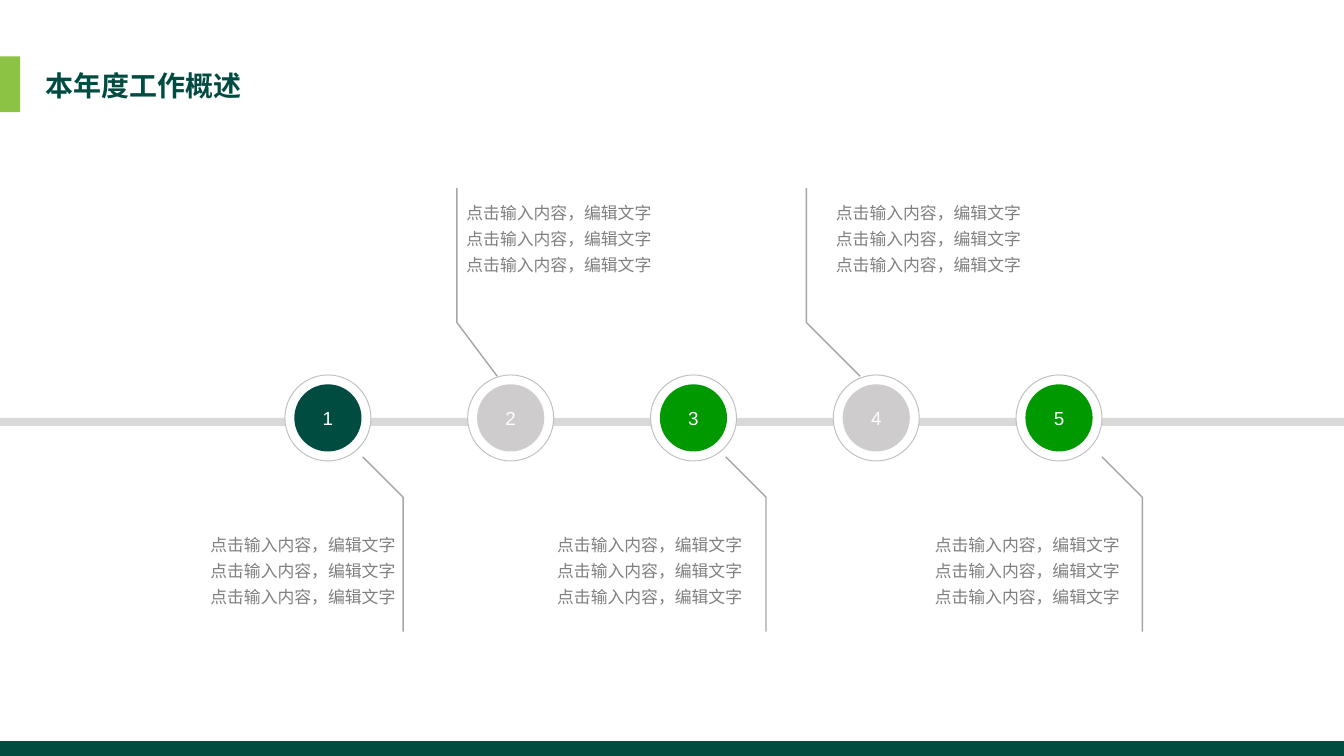
from pptx import Presentation
from pptx import util as u
from pptx.dml.color import RGBColor
from pptx.enum import shapes, text

presentation = Presentation()
presentation.slide_width = u.Inches(10)
presentation.slide_height = u.Inches(5.625)
slide = presentation.slides.add_slide(presentation.slide_layouts[6])

# Square grid: 100 columns across the slide, 56.25 rows down it
CELL = presentation.slide_width // 100
COLUMNS, ROWS = 100, 56.25
DARK, GREEN, GRAY = "004C41", "009900", "CECCCC"
RECTANGLE, OVAL = shapes.MSO_SHAPE.RECTANGLE, shapes.MSO_SHAPE.OVAL


def add_filled(kind, left, top, width, height, fill, line=None):
    """Add a preset shape, placed in grid cells, with an optional thin outline."""
    shape = slide.shapes.add_shape(
        kind, *(round(n * CELL) for n in (left, top, width, height)))
    shape.shadow.inherit = False
    shape.fill.solid()
    shape.fill.fore_color.rgb = RGBColor.from_string(fill)
    if line:
        shape.line.color.rgb = RGBColor.from_string(line)
        shape.line.width = u.Pt(0.5)
    else:
        shape.line.fill.background()
    return shape


def format_text(frame, lines, size, color, align, bold=False, spacing=None):
    frame.word_wrap = True
    frame.text = "\n".join(lines)
    for paragraph in frame.paragraphs:
        paragraph.alignment = align
        if spacing:
            paragraph.line_spacing = spacing
        for run in paragraph.runs:
            run.font.name = "Arial"
            run.font.size = u.Pt(size)
            run.font.bold = bold
            run.font.color.rgb = RGBColor.from_string(color)


# Title and page bars
add_filled(RECTANGLE, 0, 4.2, 1.5, 4.15, "8CC345")
title = slide.shapes.add_textbox(*(round(n * CELL) for n in (2.4, 4.6, 22, 3.5)))
format_text(title.text_frame, ["本年度工作概述"], 15, DARK,
            text.PP_ALIGN.LEFT, bold=True)
add_filled(RECTANGLE, 0, ROWS - 1.1, COLUMNS, 1.1, DARK)

# Timeline with evenly spaced numbered nodes
add_filled(RECTANGLE, 0, 31.1, COLUMNS, 0.6, "D9D9D9")
first_center, step, middle = 24.4, 13.6, 31.1
ring, disc = 6.4, 5
for index, color in enumerate((DARK, GRAY, GREEN, GRAY, GREEN)):
    center = first_center + index * step
    add_filled(OVAL, center - ring / 2, middle - ring / 2, ring, ring,
               "FFFFFF", "BFBFBF")
    node = add_filled(OVAL, center - disc / 2, middle - disc / 2, disc, disc, color)
    frame = node.text_frame
    frame.vertical_anchor = text.MSO_ANCHOR.MIDDLE
    frame.margin_left = frame.margin_right = u.Inches(0.08)
    frame.margin_top = frame.margin_bottom = u.Inches(0.04)
    format_text(frame, [str(index + 1)], 10.1, "FFFFFF", text.PP_ALIGN.CENTER)

# Bent leaders and captions: odd nodes point down, even nodes point up
upper, lower = 14.2, 47.1
stem, bend = 10.3, 3.1
captions = (  # leader column, caption left, caption width, points down
    (30.1, 8.8, 21.4, True),
    (33.65, 33.9, 24.9, False),
    (56.9, 33.9, 22.1, True),
    (60.45, 61.4, 25.7, False),
    (84.7, 64, 20.1, True),
)
for column, left, width, down in captions:
    end, side = (lower, -1) if down else (upper, 1)
    knee = end + side * stem
    builder = slide.shapes.build_freeform(column, end, scale=CELL)
    builder.add_line_segments(
        [(column, knee), (column + side * bend, knee + side * bend)], close=False)
    leader = builder.convert_to_shape()
    leader.shadow.inherit = False
    leader.fill.background()
    leader.line.color.rgb = RGBColor.from_string("A6A6A6")
    leader.line.width = u.Pt(0.75)

    top = 38.9 if down else upper
    caption = slide.shapes.add_textbox(
        *(round(n * CELL) for n in (left, top, width, 6.7)))
    frame = caption.text_frame
    frame.margin_left = frame.margin_right = u.Inches(0.08)
    frame.margin_top = frame.margin_bottom = u.Inches(0.04)
    align = text.PP_ALIGN.RIGHT if down else text.PP_ALIGN.JUSTIFY
    format_text(frame, ["点击输入内容，编辑文字"] * 3, 9, "808080", align, spacing=1.3)

presentation.save("out.pptx")
